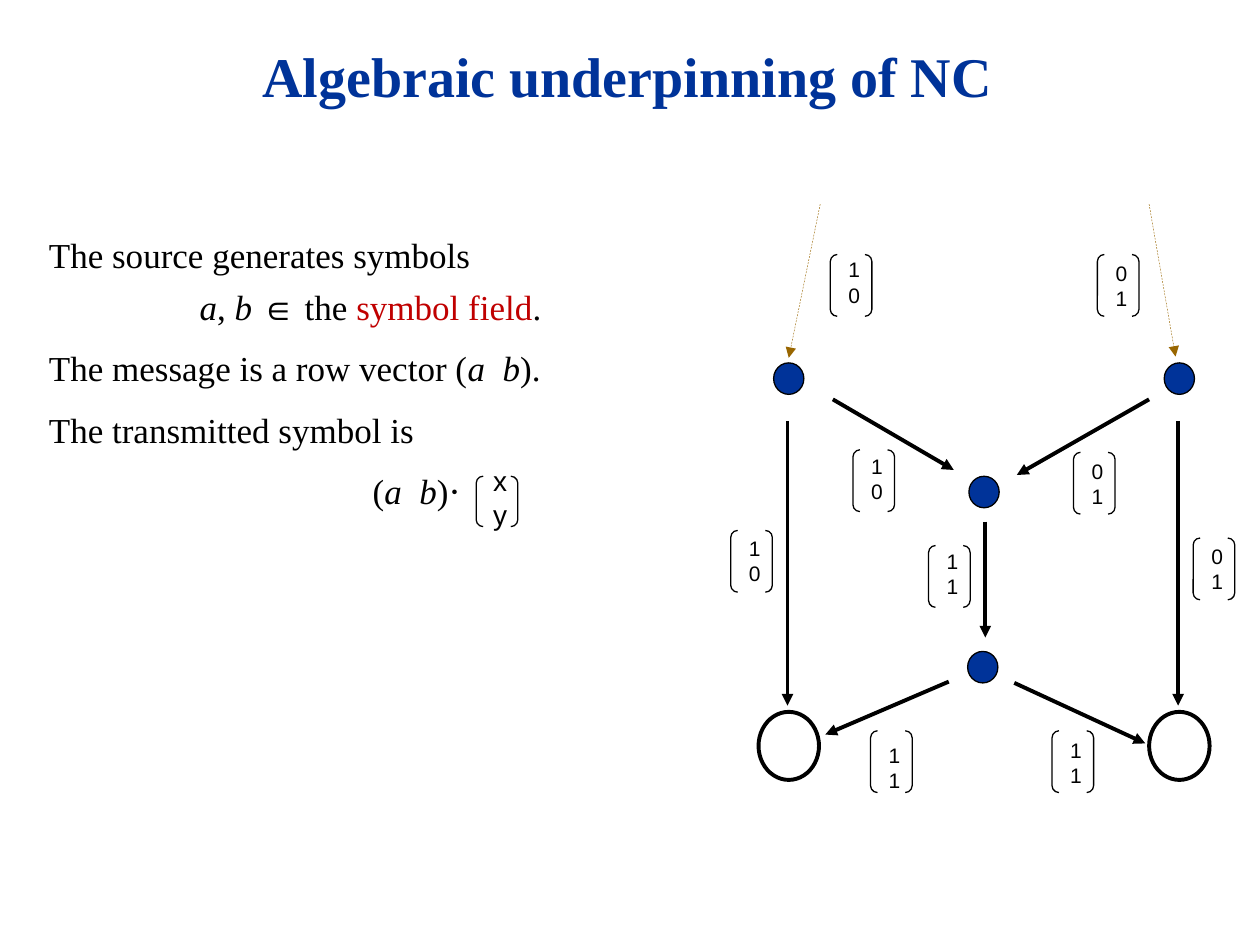
from dataclasses import dataclass, field
from typing import Any, NamedTuple

from lxml.etree import SubElement
from pptx import Presentation
from pptx.dml.color import RGBColor
from pptx.enum.dml import MSO_LINE
from pptx.enum.shapes import MSO_CONNECTOR, MSO_SHAPE
from pptx.enum.text import MSO_ANCHOR, MSO_AUTO_SIZE, PP_ALIGN
from pptx.oxml.ns import qn
from pptx.util import Inches, Pt


@dataclass(frozen=True)
class Theme:
    black: RGBColor = RGBColor(0x00, 0x00, 0x00)
    white: RGBColor = RGBColor(0xFF, 0xFF, 0xFF)
    navy: RGBColor = RGBColor(0x00, 0x33, 0x99)
    brown: RGBColor = RGBColor(0x99, 0x66, 0x00)
    red: RGBColor = RGBColor(0xC0, 0x00, 0x00)
    serif: str = "Times New Roman"
    sans: str = "Arial"
    title_size: Pt = Pt(32)
    body_size: Pt = Pt(20)
    symbol_size: Pt = Pt(16)
    label_size: Pt = Pt(12)
    hairline: Pt = Pt(0.25)
    thin: Pt = Pt(0.75)
    thick: Pt = Pt(2.25)


THEME = Theme()


class Node(NamedTuple):
    left: float
    top: float
    receiver: bool = False


class Edge(NamedTuple):
    x1: float
    y1: float
    x2: float
    y2: float
    incoming: bool = False


class ColumnVector(NamedTuple):
    left: float
    bracket_top: float
    text_top: float
    entries: str
    size: Pt = THEME.label_size
    bracket_height: float = 0.49
    text_height: float = 0.39


class Piece(NamedTuple):
    text: str
    font: dict[str, Any] = {}
    color: RGBColor = THEME.black


@dataclass(frozen=True)
class Line:
    pieces: list[Piece]
    layout: dict[str, Any] = field(default_factory=dict)
    indent: float = 0


ITALIC = {"italic": True}
SPACED = {"space_before": Pt(11)}
ROW_VECTOR = Piece("a  b", ITALIC)  # en space and space between the symbols

NODES = [
    Node(6.14, 2.88), Node(9.24, 2.88), Node(7.69, 3.78), Node(7.68, 5.17),
    Node(6.02, 5.65, receiver=True), Node(9.12, 5.65, receiver=True),
]
EDGES = [
    Edge(6.51, 1.62, 6.26, 2.84, incoming=True),
    Edge(9.12, 1.62, 9.33, 2.83, incoming=True),
    Edge(6.25, 3.34, 6.25, 5.6),
    Edge(9.35, 3.34, 9.35, 5.6),
    Edge(6.61, 3.17, 7.57, 3.73),
    Edge(9.12, 3.17, 8.07, 3.77),
    Edge(7.82, 4.14, 7.82, 5.06),
    Edge(7.53, 5.41, 6.55, 5.83),
    Edge(8.05, 5.42, 9.09, 5.9),
]
VECTORS = [
    ColumnVector(6.59, 2.02, 2.03, "10"),
    ColumnVector(8.71, 2.02, 2.06, "01"),
    ColumnVector(6.77, 3.57, 3.59, "10"),
    ColumnVector(8.52, 3.59, 3.63, "01"),
    ColumnVector(5.8, 4.21, 4.24, "10"),
    ColumnVector(9.47, 4.27, 4.3, "01"),
    ColumnVector(7.37, 4.33, 4.34, "11"),
    ColumnVector(6.91, 5.8, 5.88, "11"),
    ColumnVector(8.35, 5.8, 5.84, "11"),
]
TRANSMITTED = ColumnVector(3.78, 3.78, 3.67, "xy", THEME.symbol_size, 0.4, 0.33)
TITLE = [Line([Piece("Algebraic underpinning of NC", {"bold": True}, THEME.navy)],
              {"alignment": PP_ALIGN.CENTER})]
STATEMENTS = [
    Line([Piece("The source generates symbols")], SPACED),
    Line([Piece("a", ITALIC), Piece(", "), Piece("b ", ITALIC), Piece("∈ the "),
          Piece("symbol field", color=THEME.red), Piece(".")],
         {"alignment": PP_ALIGN.CENTER, "space_before": Pt(6)}),
    Line([Piece("The message is a row vector ("), ROW_VECTOR, Piece(").")], SPACED),
    Line([Piece("The transmitted symbol is")], SPACED),
    Line([Piece("("), ROW_VECTOR, Piece(")⋅")], SPACED, indent=2.57),
]


def apply(target: Any, values: dict[str, Any]) -> None:
    for name, value in values.items():
        setattr(target, name, value)


def box(left: float, top: float, width: float, height: float) -> list[Inches]:
    return [Inches(length) for length in (left, top, width, height)]


def write(frame: Any, lines: list[Line], typeface: str, size: Pt) -> None:
    apply(frame, {"word_wrap": True, "vertical_anchor": MSO_ANCHOR.TOP})
    for index, line in enumerate(lines):
        paragraph = frame.add_paragraph() if index else frame.paragraphs[0]
        apply(paragraph, {"alignment": PP_ALIGN.LEFT} | line.layout)
        if line.indent:
            paragraph._p.get_or_add_pPr().set("marL", str(Inches(line.indent)))
        for piece in line.pieces:
            run = paragraph.add_run()
            run.text = piece.text
            apply(run.font, {"name": typeface, "size": size} | piece.font)
            run.font.color.rgb = piece.color


def draw_outline(shape: Any, width: Pt) -> None:
    shape.shadow.inherit = False
    shape.line.color.rgb = THEME.black
    shape.line.width = width


def draw_node(shapes: Any, node: Node) -> None:
    size = (0.48, 0.54) if node.receiver else (0.24, 0.25)
    circle = shapes.add_shape(MSO_SHAPE.OVAL, *box(node.left, node.top, *size))
    draw_outline(circle, THEME.thick if node.receiver else THEME.thin)
    if node.receiver:
        circle.fill.background()
    else:
        circle.fill.solid()
        circle.fill.fore_color.rgb = THEME.navy


def draw_edge(shapes: Any, edge: Edge) -> None:
    arrow = shapes.add_connector(MSO_CONNECTOR.STRAIGHT, *box(*edge[:4]))
    arrow.line.color.rgb = THEME.brown if edge.incoming else THEME.black
    arrow.line.width = THEME.hairline if edge.incoming else THEME.thick
    if edge.incoming:
        arrow.line.dash_style = MSO_LINE.DASH
    SubElement(arrow.line._get_or_add_ln(), qn("a:tailEnd"), type="triangle")
    SubElement(arrow._element.spPr, qn("a:effectLst"))


def draw_vector(shapes: Any, vector: ColumnVector) -> None:
    group = shapes.add_group_shape().shapes
    entries = group.add_textbox(*box(vector.left, vector.text_top, 0.38, vector.text_height))
    margins = ("margin_left", "margin_top", "margin_right", "margin_bottom")
    apply(entries.text_frame, dict.fromkeys(margins, Inches(0.01)))
    centred = {"alignment": PP_ALIGN.CENTER}
    write(entries.text_frame, [Line([Piece(entry)], centred) for entry in vector.entries],
          THEME.sans, vector.size)
    brackets = group.add_shape(
        MSO_SHAPE.DOUBLE_BRACKET,
        *box(vector.left, vector.bracket_top, 0.33, vector.bracket_height))
    brackets.fill.background()
    draw_outline(brackets, THEME.thin)


def draw_statements(shapes: Any) -> None:
    panel = shapes.add_shape(MSO_SHAPE.RECTANGLE, *box(0.29, 1.8, 5.3, 2.88))
    panel.shadow.inherit = False
    panel.fill.solid()
    panel.fill.fore_color.rgb = THEME.white
    panel.line.fill.background()
    panel.text_frame.auto_size = MSO_AUTO_SIZE.SHAPE_TO_FIT_TEXT
    write(panel.text_frame, STATEMENTS, THEME.serif, THEME.body_size)


def main() -> None:
    deck = Presentation()
    apply(deck, {"slide_width": Inches(10), "slide_height": Inches(7.5)})
    shapes = deck.slides.add_slide(deck.slide_layouts[6]).shapes
    for edge in EDGES:
        draw_edge(shapes, edge)
    for node in NODES:
        draw_node(shapes, node)
    for vector in VECTORS:
        draw_vector(shapes, vector)
    draw_statements(shapes)
    title = shapes.add_textbox(*box(0.47, 0.28, 9.02, 0.79))
    write(title.text_frame, TITLE, THEME.serif, THEME.title_size)
    draw_vector(shapes, TRANSMITTED)
    deck.save("out.pptx")


if __name__ == "__main__":
    main()
